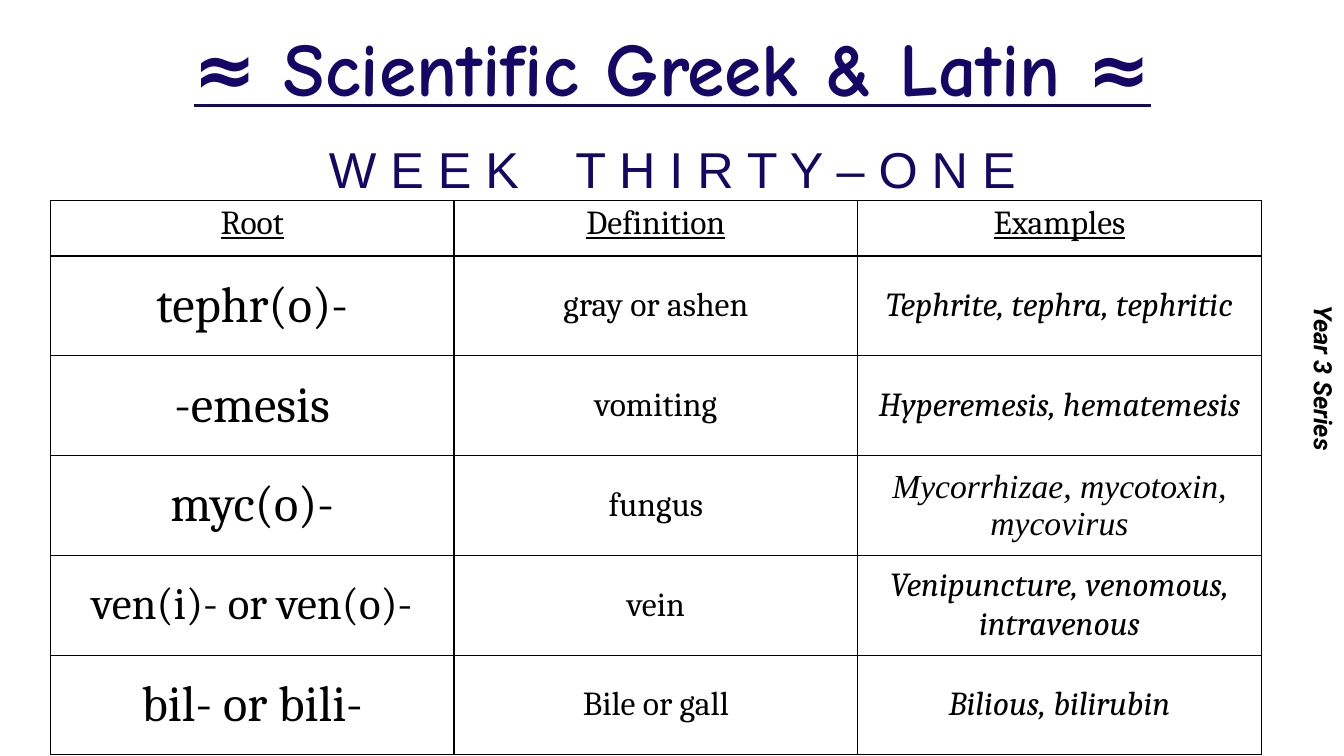
import pptx
import pptx.util
import pptx.dml.color
import pptx.enum.text
import pptx.oxml.ns
from lxml import etree

Inches = pptx.util.Inches
Pt = pptx.util.Pt
ALIGN = pptx.enum.text.PP_ALIGN
ANCHOR = pptx.enum.text.MSO_ANCHOR
qn = pptx.oxml.ns.qn

NAVY = pptx.dml.color.RGBColor(0x15, 0x07, 0x65)
BLACK = pptx.dml.color.RGBColor(0, 0, 0)

HEADINGS = ["Root", "Definition", "Examples"]
# root, size of the root, definition, examples, font of the examples
ROOTS = [
    ("tephr(o)-", 36, "gray or ashen", "Tephrite, tephra, tephritic", "Cambria"),
    ("-emesis", 36, "vomiting", "Hyperemesis, hematemesis", "Cambria"),
    ("myc(o)-", 36, "fungus", "Mycorrhizae, mycotoxin, mycovirus", "Times New Roman"),
    ("ven(i)- or ven(o)-", 32, "vein", "Venipuncture, venomous, intravenous", "Cambria"),
    ("bil- or bili-", 36, "Bile or gall", "Bilious, bilirubin", "Cambria"),
]


def write(p, text, size=24, font="Cambria", color=BLACK, bold=False,
          italic=False, underline=False, spacing=None):
    """Add a formatted run to a centred paragraph; spacing is in points."""
    p.alignment = ALIGN.CENTER
    r = p.add_run()
    r.text = text
    r.font.size = Pt(size)
    r.font.name = font
    r.font.color.rgb = color
    r.font.bold = bold
    r.font.italic = italic
    r.font.underline = underline
    if spacing is not None:
        r.font._element.set("spc", str(spacing * 100))


def add_box(s, left, top, width, height, anchor=ANCHOR.TOP):
    """Add a wrapping text box and return its text frame."""
    box = s.shapes.add_textbox(Inches(left), Inches(top), Inches(width), Inches(height))
    tf = box.text_frame
    tf.word_wrap = True
    tf.vertical_anchor = anchor
    return tf


def add_borders(cell):
    tc_pr = cell._tc.get_or_add_tcPr()
    for position, side in enumerate(("a:lnL", "a:lnR", "a:lnT", "a:lnB")):
        ln = etree.Element(qn(side), w=str(Pt(1)))
        fill = etree.SubElement(ln, qn("a:solidFill"))
        etree.SubElement(fill, qn("a:srgbClr"), val=str(BLACK))
        tc_pr.insert(position, ln)


def fill_cell(cell, text, anchor=ANCHOR.MIDDLE, inset=(0.1, 0.05), **style):
    cell.fill.background()
    add_borders(cell)
    cell.vertical_anchor = anchor
    cell.margin_left = cell.margin_right = Inches(inset[0])
    cell.margin_top = cell.margin_bottom = Inches(inset[1])
    write(cell.text_frame.paragraphs[0], text, **style)


def add_roots_table(s):
    table = s.shapes.add_table(len(ROOTS) + 1, len(HEADINGS), Inches(0.5), Inches(1.99),
                               Inches(12.01), Inches(5.51)).table
    table.first_row = False
    table.horz_banding = False
    for i, row in enumerate(table.rows):
        row.height = Inches(0.99 if i else 0.55)
    for j, heading in enumerate(HEADINGS):
        fill_cell(table.cell(0, j), heading, anchor=ANCHOR.TOP,
                  inset=(0.07, 0.04), underline=True)
    for i, (root, size, definition, examples, font) in enumerate(ROOTS, 1):
        fill_cell(table.cell(i, 0), root, size=size)
        fill_cell(table.cell(i, 1), definition)
        fill_cell(table.cell(i, 2), examples, font=font, italic=True)


def main():
    prs = pptx.Presentation()
    prs.slide_width = Inches(13.33)
    prs.slide_height = Inches(7.5)
    s = prs.slides.add_slide(prs.slide_layouts[6])

    p = add_box(s, 1.67, 0, 10, 1.42, ANCHOR.MIDDLE).paragraphs[0]
    p.line_spacing = 0.9
    write(p, "≈ Scientific Greek & Latin ≈", size=54, font="Comic Neue",
          color=NAVY, bold=True, underline=True)

    p = add_box(s, 1.67, 1.31, 10, 0.71, ANCHOR.BOTTOM).paragraphs[0]
    week = dict(size=36, font="Arial", color=NAVY)
    write(p, "W E E K", **week)
    write(p, " ", spacing=30, **week)
    write(p, "T H I R T Y – O N E", **week)

    add_roots_table(s)

    tf = add_box(s, 12.83, 0, 0.5, 7.5)
    tf._txBody.bodyPr.set("vert", "vert")
    write(tf.paragraphs[0], "Year 3 Series", size=18, font="Roboto", bold=True, italic=True)

    prs.save("out.pptx")


if __name__ == "__main__":
    main()
